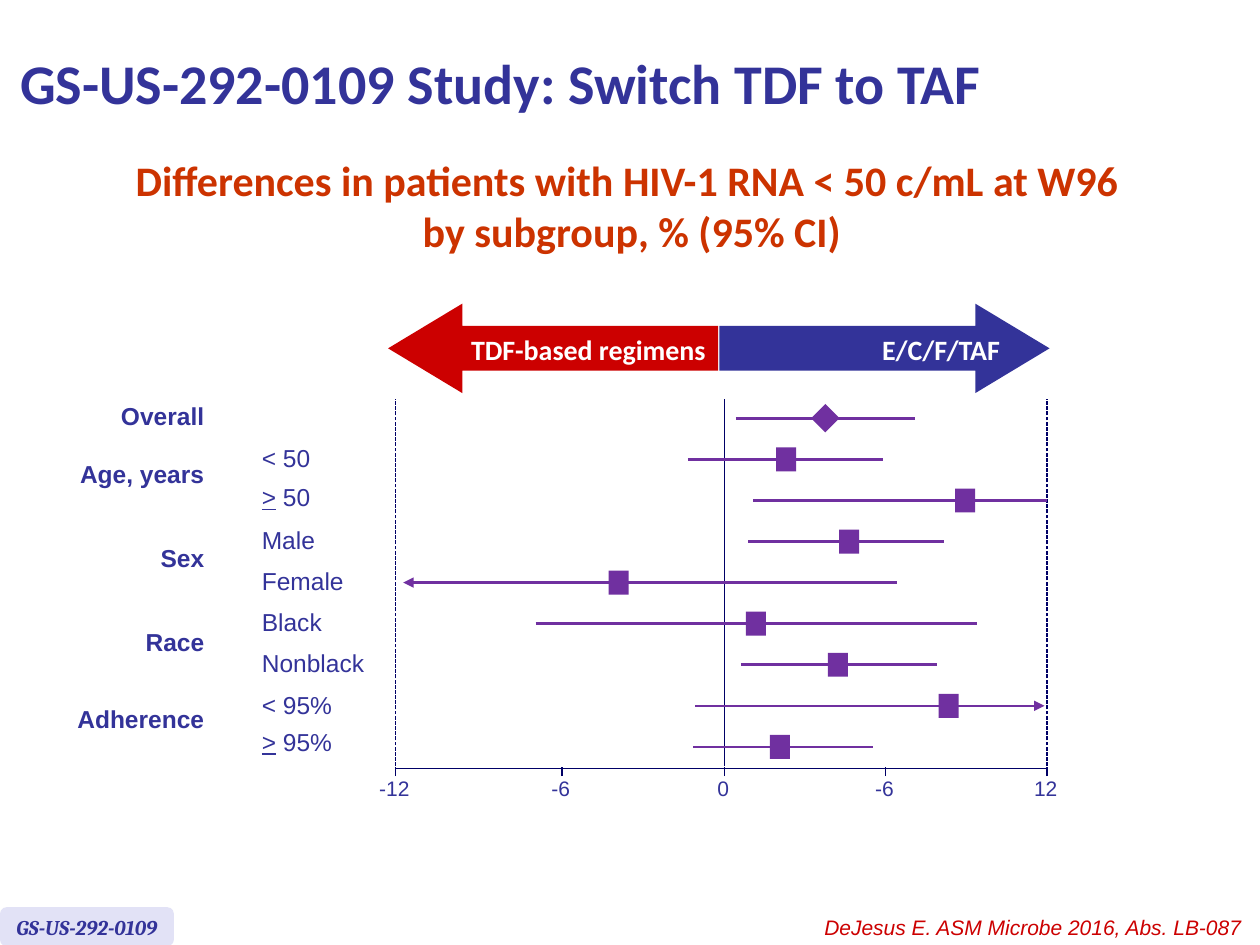
import pptx
import pptx.util
import pptx.dml.color
import pptx.enum.dml
import pptx.enum.shapes
import pptx.enum.text
import pptx.oxml.ns
from lxml import etree

Inches = pptx.util.Inches
RGBColor = pptx.dml.color.RGBColor
SHAPE = pptx.enum.shapes.MSO_SHAPE
ALIGN = pptx.enum.text.PP_ALIGN
ANCHOR = pptx.enum.text.MSO_ANCHOR
AUTO_SIZE = pptx.enum.text.MSO_AUTO_SIZE

BLUE = RGBColor(0x33, 0x33, 0x99)
NAVY = RGBColor(0x00, 0x00, 0x66)
RED = RGBColor(0xCC, 0x00, 0x00)
ORANGE = RGBColor(0xCC, 0x33, 0x00)
PURPLE = RGBColor(0x70, 0x30, 0xA0)
LAVENDER = RGBColor(0xE2, 0xE2, 0xF6)
WHITE = RGBColor(0xFF, 0xFF, 0xFF)

TITLE = "GS-US-292-0109 Study: Switch TDF to TAF"
SUBTITLE = ["Differences in patients with HIV-1 RNA < 50 c/mL at W96 ",
            "by subgroup, % (95% CI)"]
STUDY = "GS-US-292-0109"
CITATION = "DeJesus E. ASM Microbe 2016, Abs. LB-087 "

# name, top of label
GROUPS = [("Overall", 3.13), ("Age, years", 3.59), ("Sex", 4.26),
          ("Race", 4.93), ("Adherence", 5.54)]
# underlined part, rest, top of label
SUBGROUPS = [("", "< 50", 3.47), (">", " 50", 3.78), ("", "Male", 4.12),
             ("", "Female", 4.44), ("", "Black", 4.77), ("", "Nonblack", 5.09),
             ("", "< 95%", 5.43), (">", " 95%", 5.72)]
# interval start, estimate, interval end, arrowhead; the first row is overall
INTERVALS = [(5.84, 6.55, 7.26, None), (5.46, 6.24, 7.01, None),
             (5.98, 7.66, 8.31, None), (5.94, 6.74, 7.49, None),
             (3.2, 4.91, 7.12, "headEnd"), (4.25, 6.0, 7.75, None),
             (5.88, 6.65, 7.44, None), (5.52, 7.53, 8.29, "tailEnd"),
             (5.5, 6.19, 6.93, None)]
TICKS = [("-12", 3.14), ("-6", 4.46), ("0", 5.75), ("-6", 7.03), ("12", 8.31)]
# preset, left, text, fill
ARROWS = [(SHAPE.RIGHT_ARROW, 5.71, "E/C/F/TAF", BLUE),
          (SHAPE.LEFT_ARROW, 3.08, "TDF-based regimens", RED)]

FIRST_ROW, ROW_STEP = 3.32, 0.326
PLOT_TOP, AXIS = 3.17, 6.1

LABEL = dict(name="Arial", size=14, color=BLUE)
GROUP_LABEL = dict(LABEL, bold=True)
TICK_LABEL = dict(LABEL, size=12)
TITLE_FONT = dict(name="Calibri", size=32, color=BLUE, bold=True)
SUBTITLE_FONT = dict(TITLE_FONT, size=24, color=ORANGE)
ARROW_FONT = dict(TITLE_FONT, size=16, color=WHITE)
BADGE_FONT = dict(name="Cambria", size=12, color=BLUE, bold=True, italic=True)
CITATION_FONT = dict(name="Arial", size=12, color=RED, italic=True)


def format_font(font, values):
    for key, value in values.items():
        if key == "color":
            font.color.rgb = value
        else:
            setattr(font, key, pptx.util.Pt(value) if key == "size" else value)


def write(frame, lines, values, align=ALIGN.LEFT, wrap=True, anchor=ANCHOR.TOP):
    """Fill a frame; each line is a string or a list of (text, underline)."""
    frame.word_wrap = wrap
    frame.vertical_anchor = anchor
    for index, line in enumerate(lines):
        para = frame.add_paragraph() if index else frame.paragraphs[0]
        para.alignment = align
        for text, underline in [(line, None)] if isinstance(line, str) else line:
            span = para.add_run()
            span.text = text
            format_font(span.font, dict(values, underline=underline))


def add_text(page, place, lines, values, align=ALIGN.LEFT, wrap=False, inset=None):
    box = page.shapes.add_textbox(*map(Inches, place))
    frame = box.text_frame
    if inset is not None:
        for side in ("left", "right", "top", "bottom"):
            setattr(frame, "margin_" + side, Inches(inset))
    write(frame, lines, values, align, wrap)
    frame.auto_size = AUTO_SIZE.SHAPE_TO_FIT_TEXT


def add_shape(page, preset, place, fill):
    shape = page.shapes.add_shape(preset, *map(Inches, place))
    shape.shadow.inherit = False
    shape.fill.solid()
    shape.fill.fore_color.rgb = fill
    shape.line.fill.background()
    return shape


def add_line(page, start, end, color=NAVY, width=0.75, dashed=False, arrow=None):
    line = page.shapes.add_connector(pptx.enum.shapes.MSO_CONNECTOR.STRAIGHT,
                                     *map(Inches, start + end))
    line.line.color.rgb = color
    line.line.width = pptx.util.Pt(width)
    if dashed:
        line.line.dash_style = pptx.enum.dml.MSO_LINE.SQUARE_DOT
    if arrow:
        outline = line.line._get_or_add_ln()
        etree.SubElement(outline, pptx.oxml.ns.qn("a:" + arrow), type="triangle")
    etree.SubElement(line._element.spPr, pptx.oxml.ns.qn("a:effectLst"))


def add_headings(page):
    title = page.shapes.title
    title.left, title.top, title.width, title.height = map(
        Inches, (0.06, 0.05, 8.96, 1.21))
    write(title.text_frame, [TITLE], TITLE_FONT, anchor=ANCHOR.MIDDLE)
    add_text(page, (1.06, 1.23, 7.91, 0.81), SUBTITLE, SUBTITLE_FONT,
             ALIGN.CENTER, inset=0)


def add_labels(page):
    for name, top in GROUPS:
        add_text(page, (0.51, top, 1.21, 0.34), [name], GROUP_LABEL, ALIGN.RIGHT,
                 wrap=True)
    for sign, rest, top in SUBGROUPS:
        spans = [(sign, True)] if sign else []
        add_text(page, (1.98, top, 1.03, 0.34), [spans + [(rest, False)]], LABEL,
                 wrap=True)


def add_axes(page):
    for preset, left, text, fill in ARROWS:
        arrow = add_shape(page, preset, (left, 2.41, 2.62, 0.71), fill)
        arrow.adjustments[0], arrow.adjustments[1] = 0.5, 0.83
        write(arrow.text_frame, [text], ARROW_FONT, ALIGN.RIGHT)
    first, last = TICKS[0][1], TICKS[-1][1]
    add_line(page, (first, AXIS), (last, AXIS))
    for text, x in TICKS:
        add_text(page, (x - 0.24, 6.11, 0.46, 0.3), [text], TICK_LABEL, ALIGN.CENTER)
        add_line(page, (x, AXIS + 0.06), (x, AXIS - 0.01))
        if text != "-6":
            add_line(page, (x, AXIS - 0.02), (x, PLOT_TOP), dashed=text != "0")


def add_intervals(page):
    rows = [FIRST_ROW + index * ROW_STEP for index in range(len(INTERVALS))]
    for y, (start, _, end, arrow) in zip(rows, INTERVALS):
        add_line(page, (start, y), (end, y), PURPLE, 1.5, arrow=arrow)
    for index, (y, (_, estimate, _, _)) in enumerate(zip(rows, INTERVALS)):
        height = 0.19 if index else 0.16
        marker = add_shape(page, SHAPE.RECTANGLE,
                           (estimate - 0.08, y - height / 2, 0.16, height), PURPLE)
        marker.rotation = 0 if index else 45


def add_footer(page):
    add_text(page, (5.36, 7.21, 4.64, 0.3), [CITATION], CITATION_FONT,
             ALIGN.RIGHT, wrap=True)
    badge = add_shape(page, SHAPE.ROUNDED_RECTANGLE, (0, 7.2, 1.38, 0.31), LAVENDER)
    write(badge.text_frame, [STUDY], BADGE_FONT, ALIGN.CENTER, False, ANCHOR.MIDDLE)


def main():
    deck = pptx.Presentation()
    deck.slide_width, deck.slide_height = Inches(10), Inches(7.5)
    page = deck.slides.add_slide(deck.slide_layouts.get_by_name("Title Only"))
    for add_part in (add_headings, add_labels, add_axes, add_intervals, add_footer):
        add_part(page)
    deck.save("out.pptx")


if __name__ == "__main__":
    main()
